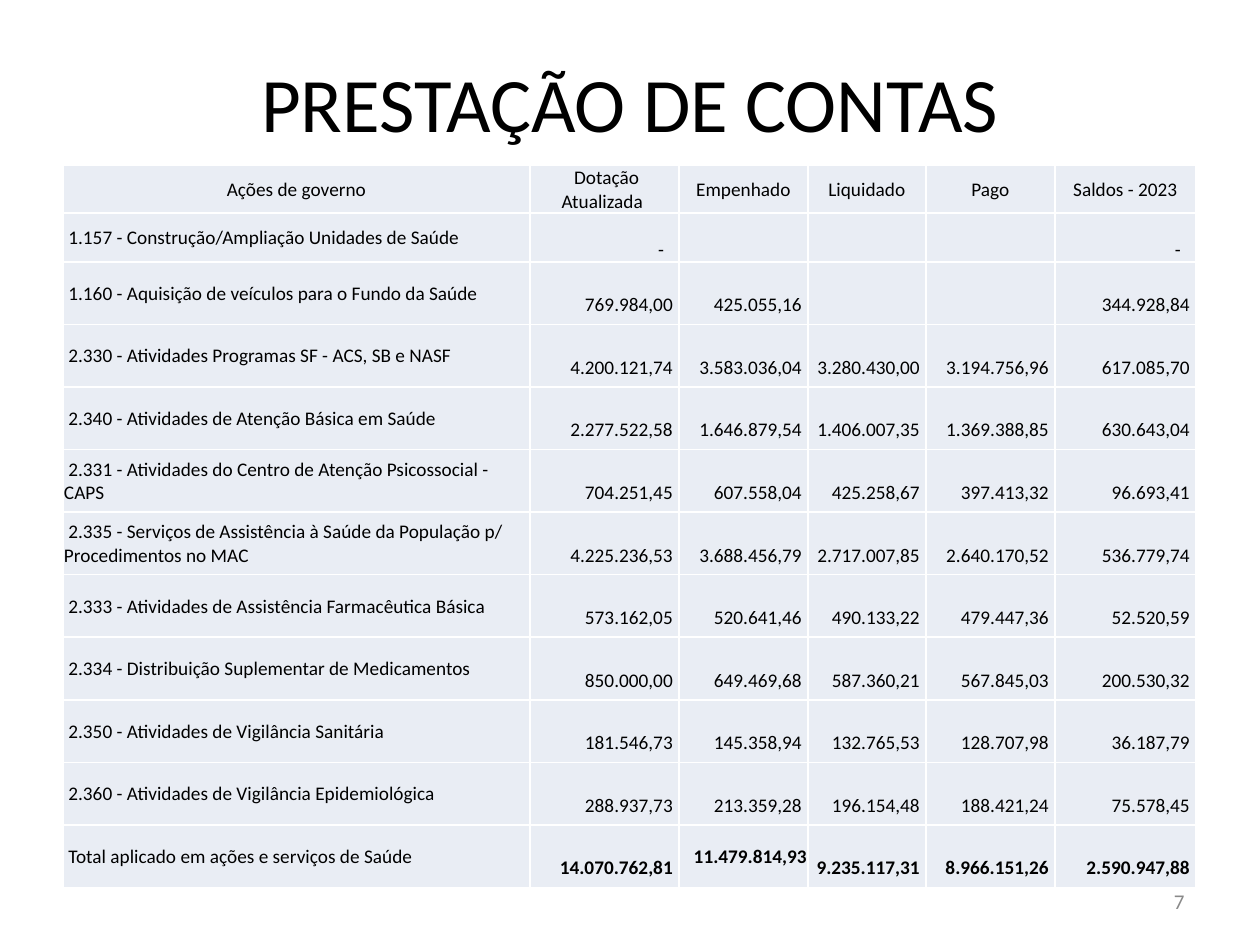
"""Build the PRESTAÇÃO DE CONTAS slide with its table of health actions."""
from typing import NamedTuple

from lxml.etree import SubElement
from pptx import Presentation
from pptx.dml.color import RGBColor
from pptx.enum.text import MSO_ANCHOR, PP_ALIGN
from pptx.oxml.ns import qn
from pptx.util import Emu, Pt

PX = 914400 // 126
COLUMNS = [467, 149, 129, 118, 129, 141]
HEADER_HEIGHT, FIRST_HEIGHT, BODY_HEIGHT = 48, 49, 626
LINE = 24
BORDERS = ("a:lnL", "a:lnR", "a:lnT", "a:lnB")


class Box(NamedTuple):
    left: int
    top: int
    width: int
    height: int


class Style(NamedTuple):
    size: int
    align: PP_ALIGN
    color: str = "000000"
    bold: bool = False


class Label(NamedTuple):
    text: str
    box: Box
    style: Style
    fill: str = ""


class Action(NamedTuple):
    name: str
    values: str


LABELS = [
    Label("7", Box(903, 876, 294, 50), Style(12, PP_ALIGN.RIGHT, "898989")),
    Label("PRESTAÇÃO DE CONTAS", Box(63, 38, 1134, 127), Style(44, PP_ALIGN.CENTER), "FFFFFF"),
]
HEADERS = ["Ações de governo", "Dotação Atualizada", "Empenhado", "Liquidado", "Pago", "Saldos - 2023"]
ACTIONS = [
    Action("1.157 - Construção/Ampliação Unidades de Saúde", "-||||-"),
    Action("1.160 - Aquisição de veículos para o Fundo da Saúde",
           "769.984,00|425.055,16|||344.928,84"),
    Action("2.330 - Atividades Programas SF - ACS, SB e NASF",
           "4.200.121,74|3.583.036,04|3.280.430,00|3.194.756,96|617.085,70"),
    Action("2.340 - Atividades de Atenção Básica em Saúde",
           "2.277.522,58|1.646.879,54|1.406.007,35|1.369.388,85|630.643,04"),
    Action("2.331 - Atividades do Centro de Atenção Psicossocial - CAPS",
           "704.251,45|607.558,04|425.258,67|397.413,32|96.693,41"),
    Action("2.335 - Serviços de Assistência à Saúde da População p/ Procedimentos no MAC",
           "4.225.236,53|3.688.456,79|2.717.007,85|2.640.170,52|536.779,74"),
    Action("2.333 - Atividades de Assistência Farmacêutica Básica",
           "573.162,05|520.641,46|490.133,22|479.447,36|52.520,59"),
    Action("2.334 - Distribuição Suplementar de Medicamentos",
           "850.000,00|649.469,68|587.360,21|567.845,03|200.530,32"),
    Action("2.350 - Atividades de Vigilância Sanitária",
           "181.546,73|145.358,94|132.765,53|128.707,98|36.187,79"),
    Action("2.360 - Atividades de Vigilância Epidemiológica",
           "288.937,73|213.359,28|196.154,48|188.421,24|75.578,45"),
    Action("Total aplicado em ações e serviços de Saúde",
           "14.070.762,81|11.479.814,93|9.235.117,31|8.966.151,26|2.590.947,88"),
]


def px(n: float) -> Emu:
    return Emu(round(n * PX))


def rgb(color: str) -> RGBColor:
    return RGBColor.from_string(color)


def write(tf, text: str, style: Style) -> None:
    p = tf.paragraphs[0]
    p.alignment = style.align
    r = p.add_run()
    r.text = text
    r.font.color.rgb = rgb(style.color)
    for name, value in {"name": "Calibri", "size": Pt(style.size), "bold": style.bold}.items():
        setattr(r.font, name, value)


def add_label(s, label: Label) -> None:
    sp = s.shapes.add_textbox(*map(px, label.box))
    if label.fill:
        sp.fill.solid()
        sp.fill.fore_color.rgb = rgb(label.fill)
    tf = sp.text_frame
    tf.word_wrap = True
    tf.vertical_anchor = MSO_ANCHOR.MIDDLE
    write(tf, label.text, label.style)


def format_cell(cell, right: int = 1, top: int = 1) -> None:
    margins = {"margin_left": 1, "margin_right": right, "margin_top": top, "margin_bottom": 0}
    for name, value in margins.items():
        setattr(cell, name, px(value))
    cell.vertical_anchor = MSO_ANCHOR.MIDDLE
    tc_pr = cell._tc.get_or_add_tcPr()
    for tag in BORDERS:
        ln = SubElement(tc_pr, qn(tag), w=str(Pt(1)))
        SubElement(SubElement(ln, qn("a:solidFill")), qn("a:srgbClr"), val="FFFFFF")
    cell.fill.solid()
    cell.fill.fore_color.rgb = rgb("E9EDF4")


def fill_value(cell, value: str, total: bool) -> None:
    tight = value == "11.479.814,93"
    right = 15 if value == "-" else 1 if tight else 6
    format_cell(cell, right, LINE if value and not tight else 1)
    if value:
        write(cell.text_frame, value, Style(11, PP_ALIGN.RIGHT, bold=total))


def add_actions_table(s) -> None:
    heights = [HEADER_HEIGHT, FIRST_HEIGHT] + [BODY_HEIGHT / (len(ACTIONS) - 1)] * (len(ACTIONS) - 1)
    box = Box(63, 165, sum(COLUMNS), round(sum(heights)))
    table = s.shapes.add_table(len(heights), len(COLUMNS), *map(px, box)).table
    table.first_row = table.horz_banding = False
    for column, width in zip(table.columns, COLUMNS):
        column.width = px(width)
    for row, height in zip(table.rows, heights):
        row.height = px(height)
    for cell, text in zip(table.rows[0].cells, HEADERS):
        format_cell(cell)
        write(cell.text_frame, f" {text} ", Style(11, PP_ALIGN.CENTER))
    for i, action in enumerate(ACTIONS, 1):
        name_cell, *value_cells = table.rows[i].cells
        format_cell(name_cell)
        write(name_cell.text_frame, f" {action.name}", Style(11, PP_ALIGN.LEFT))
        for cell, value in zip(value_cells, action.values.split("|")):
            fill_value(cell, value, i == len(ACTIONS))


def main() -> None:
    prs = Presentation()
    prs.slide_width, prs.slide_height = px(1260), px(945)
    s = prs.slides.add_slide(prs.slide_layouts[6])
    for label in LABELS:
        add_label(s, label)
    add_actions_table(s)
    prs.save("out.pptx")


if __name__ == "__main__":
    main()
